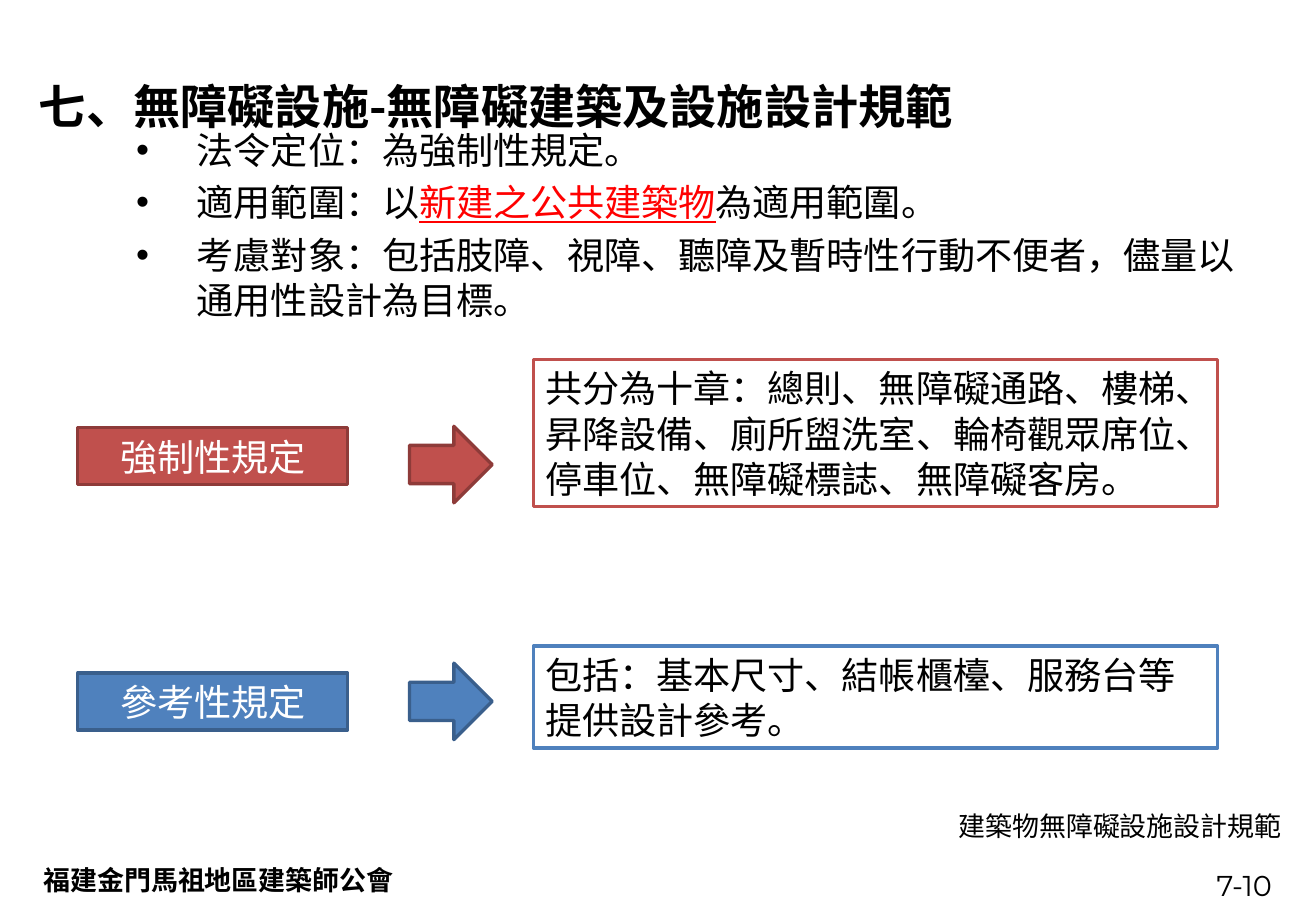
from dataclasses import dataclass

from lxml import etree
from pptx import Presentation
from pptx.dml.color import RGBColor
from pptx.enum.shapes import MSO_SHAPE as Shape
from pptx.enum.text import MSO_ANCHOR as Anchor, MSO_AUTO_SIZE as AutoSize, PP_ALIGN as Align
from pptx.oxml.ns import qn
from pptx.util import Inches, Pt


@dataclass(frozen=True)
class Theme:
    cjk: str = "Noto Sans CJK SC"
    footer_font: str = "Calibri"
    number_font: str = "Montserrat"
    black: str = "000000"
    white: str = "FFFFFF"
    accent: str = "FF0000"
    mandatory: tuple = ("C0504D", "8E3B39")
    reference: tuple = ("4F81BD", "3A5F8C")
    title: int = 28
    body: int = 22
    small: int = 16
    number: int = 17
    line_ratio: float = 1.22
    border: int = 2


THEME = Theme()


def color(value):
    return RGBColor.from_string(value)


def place(part, box):
    for side, length in zip(("left", "top", "width", "height"), box):
        setattr(part, side, Inches(length))


def set_frame(frame, margins=(0.1, 0.05), anchor=Anchor.TOP, wrap=True):
    across, down = map(Inches, margins)
    settings = {"margin_left": across, "margin_right": across,
                "margin_top": down, "margin_bottom": down,
                "vertical_anchor": anchor, "word_wrap": wrap,
                "auto_size": AutoSize.NONE}
    for name, value in settings.items():
        setattr(frame, name, value)


def add_run(paragraph, text, size, ink=THEME.black, font=THEME.cjk, **extras):
    run = paragraph.add_run()
    run.text = text
    settings = {"name": font, "size": Pt(size), **extras}
    for name, value in settings.items():
        setattr(run.font, name, value)
    run.font.color.rgb = color(ink)
    # East Asian glyphs use the same family throughout
    latin = run.font._element.find(qn("a:latin"))
    east_asian = etree.Element(qn("a:ea"), typeface=THEME.cjk)
    latin.addnext(east_asian)


def write(frame, text, size, align=Align.LEFT, **style):
    paragraph = frame.paragraphs[0]
    paragraph.alignment = align
    paragraph.line_spacing = Pt(round(size * THEME.line_ratio, 1))
    add_run(paragraph, text, size, **style)


def add_title(slide, box, text):
    title = slide.shapes.title
    place(title, box)
    set_frame(title.text_frame)
    write(title.text_frame, text, THEME.title, bold=True)


def add_points(slide, box, points):
    body = slide.placeholders[1]
    place(body, box)
    frame = body.text_frame
    set_frame(frame)
    for index, pieces in enumerate(points):
        paragraph = frame.add_paragraph() if index else frame.paragraphs[0]
        properties = paragraph._p.get_or_add_pPr()
        properties.set("marL", str(Inches(0.62)))
        properties.set("indent", str(Inches(-0.5)))
        etree.SubElement(properties, qn("a:buFont"), typeface="Arial")
        etree.SubElement(properties, qn("a:buChar"), char="•")
        paragraph.line_spacing = Pt(round(THEME.body * THEME.line_ratio, 1))
        paragraph.space_before = Pt(THEME.body * 0.2 if index else 0)
        for text, highlighted in pieces:
            add_run(paragraph, text, THEME.body,
                    THEME.accent if highlighted else THEME.black,
                    underline=highlighted)


def add_block(slide, kind, box, fill, line):
    block = slide.shapes.add_shape(kind, *map(Inches, box))
    block.shadow.inherit = False
    block.fill.solid()
    block.fill.fore_color.rgb = color(fill)
    block.line.color.rgb = color(line)
    block.line.width = Pt(THEME.border)
    set_frame(block.text_frame, anchor=Anchor.MIDDLE)
    return block


def add_regulation(slide, box, palette, label, detail, label_drop, arrow_drop):
    left, top, width, height = box
    fill, line = palette
    detail_left = left + 3.75

    # Category label
    category = add_block(slide, Shape.RECTANGLE,
                         (left, top + label_drop, 2.22, 0.47), fill, line)
    write(category.text_frame, label, THEME.body, Align.CENTER, ink=THEME.white)

    # Arrow towards the contents
    add_block(slide, Shape.RIGHT_ARROW,
              (left + 2.73, top + arrow_drop, 0.68, 0.63), fill, line)

    # Contents of the category
    contents = add_block(slide, Shape.RECTANGLE,
                         (detail_left, top, left + width - detail_left, height),
                         THEME.white, fill)
    write(contents.text_frame, detail, THEME.body)


def add_note(slide, box, text, size, frame_style=None, **style):
    note = slide.shapes.add_textbox(*map(Inches, box))
    set_frame(note.text_frame, **(frame_style or {}))
    write(note.text_frame, text, size, **style)


def add_footer(slide, box):
    left, top, width, height = box
    right = left + width
    add_note(slide, (right - 3.06, top, 3.06, 0.37),
             "建築物無障礙設施設計規範", THEME.small)
    add_note(slide, (left, top + 0.45, 3.12, 0.37),
             "福建金門馬祖地區建築師公會", THEME.small,
             {"wrap": False}, font=THEME.footer_font, bold=True)
    add_note(slide, (right - 0.91, top + height - 0.28, 0.6, 0.28),
             "7-10", THEME.number,
             {"margins": (0, 0), "anchor": Anchor.MIDDLE, "wrap": False},
             align=Align.CENTER, font=THEME.number_font)


def main():
    deck = Presentation()
    deck.slide_width, deck.slide_height = Inches(10.83), Inches(7.5)
    slide = deck.slides.add_slide(deck.slide_layouts[1])

    add_title(slide, (0.22, 0.58, 8.7, 0.57),
              "七、無障礙設施-無障礙建築及設施設計規範")
    add_points(slide, (0.9, 0.99, 9.53, 1.81), [
        [("法令定位：為強制性規定。", False)],
        [("適用範圍：以", False), ("新建之公共建築物", True), ("為適用範圍。", False)],
        [("考慮對象：包括肢障、視障、聽障及暫時性行動不便者，儘量以通用性設計為目標。", False)],
    ])
    add_regulation(slide, (0.64, 2.96, 9.38, 1.21), THEME.mandatory, "強制性規定",
                   "共分為十章：總則、無障礙通路、樓梯、昇降設備、廁所盥洗室、"
                   "輪椅觀眾席位、停車位、無障礙標誌、無障礙客房。", 0.56, 0.55)
    add_regulation(slide, (0.64, 5.32, 9.38, 0.84), THEME.reference, "參考性規定",
                   "包括：基本尺寸、結帳櫃檯、服務台等提供設計參考。", 0.22, 0.14)
    add_footer(slide, (0.26, 6.61, 10.59, 0.81))

    deck.save("out.pptx")


if __name__ == "__main__":
    main()
